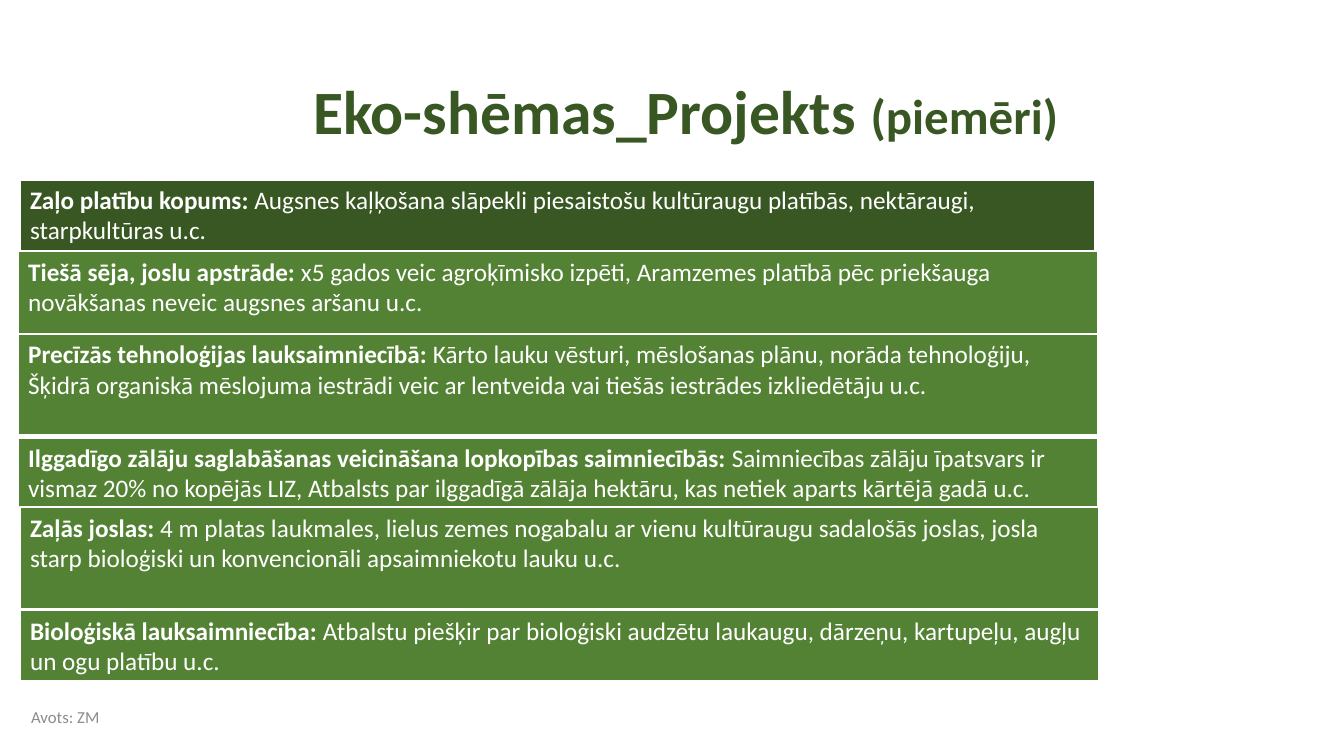
"""Build the slide listing draft eco-schemes with examples."""
import dataclasses

import pptx
import pptx.dml.color
import pptx.enum.shapes
import pptx.enum.text
import pptx.util

TITLE = ("Eko-shēmas_Projekts ", "(piemēri)")
SOURCE = "Avots: ZM"
SCHEMES = [
    ("Zaļo platību kopums: ",
     "Augsnes kaļķošana slāpekli piesaistošu kultūraugu platībās, nektāraugi, "
     "starpkultūras u.c."),
    ("Tiešā sēja, joslu apstrāde: ",
     "x5 gados veic agroķīmisko izpēti, Aramzemes platībā pēc priekšauga "
     "novākšanas neveic augsnes aršanu u.c."),
    ("Precīzās tehnoloģijas lauksaimniecībā: ",
     "Kārto lauku vēsturi, mēslošanas plānu, norāda tehnoloģiju, Šķidrā organiskā "
     "mēslojuma iestrādi veic ar lentveida vai tiešās iestrādes izkliedētāju u.c."),
    ("Ilggadīgo zālāju saglabāšanas veicināšana lopkopības saimniecībās: ",
     "Saimniecības zālāju īpatsvars ir vismaz 20% no kopējās LIZ, Atbalsts par "
     "ilggadīgā zālāja hektāru, kas netiek aparts kārtējā gadā u.c."),
    ("Zaļās joslas: ",
     "4 m platas laukmales, lielus zemes nogabalu ar vienu kultūraugu sadalošās "
     "joslas, josla starp bioloģiski un konvencionāli apsaimniekotu lauku u.c."),
    ("Bioloģiskā lauksaimniecība: ",
     "Atbalstu piešķir par bioloģiski audzētu laukaugu, dārzeņu, kartupeļu, augļu "
     "un ogu platību u.c."),
]
BANDS = [
    (14.4, 128.2, 768.2, 72.7),
    (13, 179.3, 771, 94.3),
    (13, 238.3, 771, 72.7),
    (13, 312.5, 771, 94.3),
    (14.4, 362.2, 771, 72.7),
    (14.4, 435.6, 771, 51.1),
]


@dataclasses.dataclass(frozen=True)
class Theme:
    """Colours and type sizes of the slide."""
    font: str = "Calibri"
    dark: str = "385723"
    green: str = "548235"
    white: str = "FFFFFF"
    grey: str = "8C8C8C"
    title: float = 44
    subtitle: float = 35
    body: float = 18
    source: float = 12
    border: float = 1.5


THEME = Theme()
Pt = pptx.util.Pt
ANCHOR = pptx.enum.text.MSO_ANCHOR


def rgb(value):
    """Turn a hex value into a colour."""
    return pptx.dml.color.RGBColor.from_string(value)


def prepare(frame, anchor):
    """Set wrapping, fixed size and vertical anchor of a text frame."""
    frame.word_wrap = True
    frame.auto_size = pptx.enum.text.MSO_AUTO_SIZE.NONE
    frame.vertical_anchor = anchor
    return frame.paragraphs[0]


def style(font, size, color):
    """Apply the theme font with a size and colour."""
    font.name = THEME.font
    font.size = Pt(size)
    font.color.rgb = rgb(color)


def add_title(page):
    """Fill and place the title placeholder."""
    box = page.shapes.title
    box.left, box.top, box.width, box.height = map(Pt, (200.2, 49, 555.8, 56.9))
    frame = box.text_frame
    para = prepare(frame, ANCHOR.BOTTOM)
    frame.margin_left = frame.margin_right = frame.margin_top = frame.margin_bottom = 0
    para.alignment = pptx.enum.text.PP_ALIGN.RIGHT
    para.line_spacing = 0.9
    para.space_before = Pt(0)
    style(para.font, THEME.title, THEME.dark)
    para.font.bold = True
    for text, size in zip(TITLE, (THEME.title, THEME.subtitle)):
        span = para.add_run()
        span.text = text
        span.font.size = Pt(size)


def add_band(page, scheme, place, color):
    """Add one scheme band with a bold name and its examples."""
    box = page.shapes.add_shape(
        pptx.enum.shapes.MSO_SHAPE.RECTANGLE, *map(Pt, place))
    box.shadow.inherit = False
    box.fill.solid()
    box.fill.fore_color.rgb = rgb(color)
    box.line.color.rgb = rgb(THEME.white)
    box.line.width = Pt(THEME.border)
    para = prepare(box.text_frame, ANCHOR.TOP)
    para.alignment = pptx.enum.text.PP_ALIGN.LEFT
    style(para.font, THEME.body, THEME.white)
    for text, bold in zip(scheme, (True, False)):
        span = para.add_run()
        span.text = text
        span.font.bold = bold


def add_source(page):
    """Add the source line at the foot."""
    box = page.shapes.add_textbox(*map(Pt, (15.1, 500.4, 208.1, 23.8)))
    para = prepare(box.text_frame, ANCHOR.MIDDLE)
    para.text = SOURCE
    style(para.font, THEME.source, THEME.grey)


def main():
    """Create and save the deck."""
    deck = pptx.Presentation()
    deck.slide_width, deck.slide_height = Pt(960), Pt(540)
    page = deck.slides.add_slide(deck.slide_layouts.get_by_name("Title Only"))
    add_title(page)
    for index, (scheme, place) in enumerate(zip(SCHEMES, BANDS)):
        add_band(page, scheme, place, THEME.green if index else THEME.dark)
    add_source(page)
    deck.save("out.pptx")


if __name__ == "__main__":
    main()
